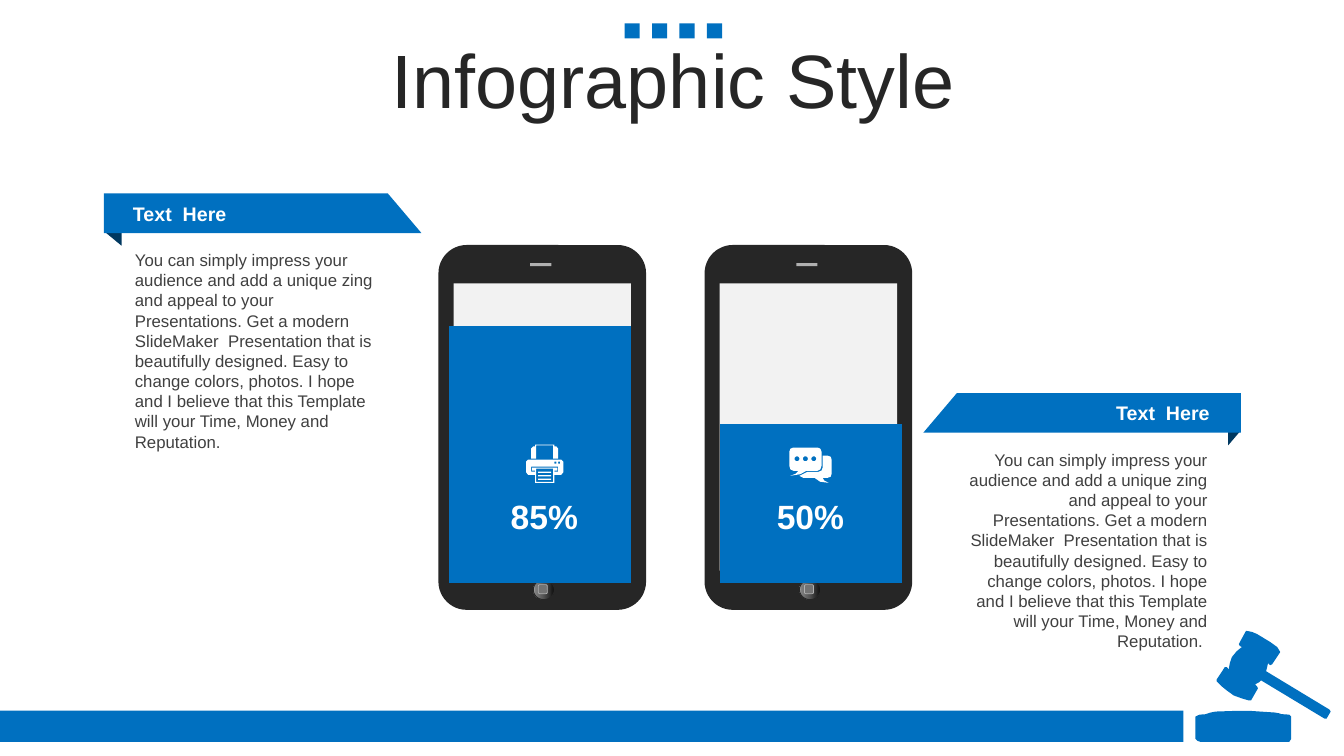
from copy import deepcopy
from dataclasses import dataclass
from math import cos, pi, sin

from lxml.etree import SubElement
from pptx import Presentation
from pptx.chart.data import CategoryChartData
from pptx.dml.color import RGBColor
from pptx.enum.chart import XL_CHART_TYPE
from pptx.enum.shapes import MSO_SHAPE
from pptx.enum.text import MSO_ANCHOR, PP_ALIGN
from pptx.oxml.ns import qn
from pptx.util import Pt


@dataclass(frozen=True)
class Theme:
    """Colours, font and type sizes of the slide."""
    blue: str = "0070C0"
    navy: str = "003860"
    dark: str = "262626"
    body: str = "404040"
    grey: str = "B0B0B0"
    key: str = "737373"
    pale: str = "F2F2F2"
    white: str = "FFFFFF"
    shine: tuple = ((0, "0F0F0F"), (.56, "595959"), (.91, "808080"), (1, "BFBFBF"))
    font: str = "Arial"
    title: int = 54
    share: int = 24
    chart: int = 18
    label: int = 14
    text: int = 12


T = Theme()
BODY = ("You can simply impress your audience and add a unique zing and appeal to your "
        "Presentations. Get a modern SlideMaker  Presentation that is beautifully designed. "
        "Easy to change colors, photos. I hope and I believe that this Template will your "
        "Time, Money and Reputation.")
BASE = [(0, 4.3), (0, 20.2), (1.4, 21.6), (3.6, 22.3), (67, 22.3), (68.4, 20.2),
        (68.4, 4.3), (67, 2.9), (61.2, 2.5), (60, 2), (56.9, 1.4), (38.9, .2),
        (28.8, .2), (14.4, .7), (10.8, 1.4), (7.2, 2.6), (2.9, 2.9), (1.4, 3.6)]
GAVEL = [(1.4, 37.4), (3.6, 39.6), (7.2, 42.5), (12.2, 46.1), (18, 48.2), (23, 49.7),
         (24.5, 49.7), (29.5, 41), (28.8, 39.6), (27.4, 38.2), (30.2, 36.7), (31.7, 35.3),
         (77, 62.6), (78.5, 62.6), (81.4, 57.6), (80.6, 56.2), (35.3, 28.8), (36, 25.9),
         (36.7, 23), (38.2, 24.5), (39.6, 23.8), (45.4, 15.1), (44.6, 13.7), (43.2, 11.5),
         (38.2, 7.9), (28.8, 2.2), (25.2, .7), (21.6, 0), (20.9, 0), (15.8, 9.4),
         (16.6, 10.8), (18, 11.5), (14.4, 14.4), (10.8, 18.7), (9.4, 23), (8.6, 27.4),
         (7.2, 25.9), (5.8, 25.9), (0, 34.6), (0, 36)]
SLOT = [(3.6, 15.8), (3.6, 19.4), (6.5, 19.4), (6.5, 18.7), (4.3, 18.7), (4.3, 16.6),
        (22.3, 16.6), (22.3, 18.7), (20.2, 18.7), (20.2, 19.4), (23, 19.4), (23, 15.8)]
CASE = [(1.4, 10.8), (25.2, 10.8), (26.6, 12.2), (26.6, 19.8), (25.2, 21.6), (20.2, 21.6),
        (20.2, 27.4), (6.5, 27.4), (6.5, 21.6), (1.4, 21.6), (0, 19.8), (0, 12.2)]
TRAY = [(6.5, 0), (20.2, 0), (20.2, 1.4), (21.6, 1.4), (23, 2.9), (23, 10.1), (19.4, 10.1),
        (19.4, .7), (7.2, .7), (7.2, 10.1), (3.6, 10.1), (3.6, 2.9), (5, 1.4), (6.5, 1.4)]
FRONT = [(2.9, 0), (20.2, 0), (22.2, .8), (23, 2.9), (23, 13), (22.2, 15.6), (20.2, 16.6),
         (12.2, 16.6), (7.9, 19), (.7, 20.2), (4.6, 18.7), (6.5, 16.6), (2.9, 16.6),
         (.8, 15.6), (0, 13), (0, 2.9), (.8, .8)]
BACK = [(23.8, 5.8), (27.4, 5.8), (29.6, 6.6), (30.2, 8.6), (30.2, 18.7), (29.6, 20.8),
        (27.4, 21.6), (23.8, 21.6), (25, 23.6), (28.1, 25.2), (22, 24.4), (18, 21.6),
        (10, 21.6), (7.2, 20.2), (13, 17.3), (20.9, 17.3), (23, 16.4), (23.8, 14.4)]


def rgb(code):
    """Turn a hex code into a colour."""
    return RGBColor.from_string(code)


def paint(shape, fill):
    """Give a shape a flat fill with no line or shadow."""
    shape.shadow.inherit = False
    shape.fill.solid()
    shape.fill.fore_color.rgb = rgb(fill)
    shape.line.fill.background()
    return shape


def block(slide, x, y, w, h, fill, kind=MSO_SHAPE.RECTANGLE):
    """Add a flat preset shape."""
    return paint(slide.shapes.add_shape(kind, Pt(x), Pt(y), Pt(w), Pt(h)), fill)


def outline(slide, x, y, loops, fill):
    """Draw closed loops, relative to x and y, as one shape."""
    loops = [[(Pt(x + a), Pt(y + b)) for a, b in loop] for loop in loops]
    pen = slide.shapes.build_freeform(*loops[0][0])
    pen.add_line_segments(loops[0][1:])
    for loop in loops[1:]:
        pen.move_to(*loop[0])
        pen.add_line_segments(loop[1:])
    return paint(pen.convert_to_shape(), fill)


def write(frame, text, size, color, align, bold=False, mid=True):
    """Put one styled run in a text frame."""
    frame.word_wrap = True
    frame.vertical_anchor = MSO_ANCHOR.MIDDLE if mid else MSO_ANCHOR.TOP
    para = frame.paragraphs[0]
    para.alignment = align
    run = para.add_run()
    run.text = text
    run.font.name, run.font.size, run.font.bold = T.font, Pt(size), bold
    run.font.color.rgb = rgb(color)
    return para


def box(slide, x, y, w, h, *args, **style):
    """Add a text box and return its frame."""
    frame = slide.shapes.add_textbox(Pt(x), Pt(y), Pt(w), Pt(h)).text_frame
    write(frame, *args, **style)
    return frame


def header(slide, x, y, w, h):
    """Place the title and the row of squares over it."""
    size, step = 10.8, 19.6
    left = x + (w - 3 * step - size) / 2
    for i in range(4):
        block(slide, left + i * step, y - 15, size, size, T.blue)
    title = slide.shapes.title
    title.left, title.top, title.width, title.height = Pt(x), Pt(y), Pt(w), Pt(h)
    para = write(title.text_frame, "Infographic Style", T.title, T.dark, PP_ALIGN.CENTER)
    para.line_spacing, para.space_before = .9, Pt(10)


def footer(slide, x, y, w, h):
    """Draw the bottom bar and the gavel at its end."""
    block(slide, x, y, w, h, T.blue)
    outline(slide, x + w + 8.6, y, [BASE], T.blue)
    outline(slide, x + w + 23.8, y - 56.9, [GAVEL], T.blue)


def phone(slide, x, y, w, h):
    """Draw a phone with speaker, button and screen."""
    case = block(slide, x, y, w, h, T.dark, MSO_SHAPE.ROUNDED_RECTANGLE)
    case.adjustments[0] = .136
    block(slide, x + 65.5, y + 13, 15.1, 2.2, T.grey)
    disc = block(slide, x + 67.7, y + 239, 15.1, 14.4, T.dark, MSO_SHAPE.OVAL)
    disc.fill.gradient()
    disc.fill.gradient_angle = 180
    stops = disc.fill._fill._gradFill.find(qn("a:gsLst"))
    for _ in T.shine[2:]:
        stops.append(deepcopy(stops[0]))
    for stop, (place, color) in zip(disc.fill.gradient_stops, T.shine):
        stop.position, stop.color.rgb = place, rgb(color)
    disc.line.color.rgb, disc.line.width = rgb(T.dark), Pt(0)
    key = block(slide, x + 71.3, y + 242.6, 6.5, 6.5, T.key, MSO_SHAPE.ROUNDED_RECTANGLE)
    key.line.color.rgb, key.line.width = rgb(T.grey), Pt(.5)
    block(slide, x + 10.8, y + 27.4, w - 21.6, 205.2, T.pale)


def banner(slide, x, y, w, h, text, fold, label, body, flip=False):
    """Draw a folded ribbon with its label and the text below it."""
    align = PP_ALIGN.RIGHT if flip else PP_ALIGN.LEFT

    def side(points):
        return [(w - a if flip else a, b) for a, b in points]

    def left(inset, wide):
        return x + (w - inset - wide if flip else inset)

    outline(slide, x, y, [side([(0.5, h - 1), (fold, h - 1), (fold, h + 9)])], T.navy)
    outline(slide, x, y, [side([(0, 0), (w - 24, 0), (w, h), (0, h)])], T.blue)
    frame = box(slide, left(label, 113), y, 113, h, "Text  Here", T.label, T.white,
                align, bold=True)
    frame.margin_left = Pt(8.6)
    frame.paragraphs[0].space_before = Pt(2.8)
    box(slide, left(body, 189), y + 36.7, 189, 152.6, text, T.text, T.body, align, mid=False)


def levels(slide, x, y, w, h):
    """Chart the fill levels of both screens."""
    data = CategoryChartData()
    data.categories = ["1", "2"]
    data.add_series("Series 1", (100, 62))
    chart = slide.shapes.add_chart(XL_CHART_TYPE.COLUMN_STACKED, Pt(x), Pt(y), Pt(w), Pt(h),
                                   data).chart
    chart.has_legend = chart.has_title = False
    chart.font.name, chart.font.size = T.font, Pt(T.chart)
    chart.font.color.rgb = rgb("000000")
    chart.value_axis.minimum_scale, chart.value_axis.maximum_scale = 0, 100
    chart.value_axis.has_major_gridlines = False
    chart.value_axis.visible = chart.category_axis.visible = False
    plot = chart.plots[0]
    plot.gap_width, plot.overlap, plot.vary_by_categories = 49, 100, False
    fill = plot.series[0].format.fill
    fill.solid()
    fill.fore_color.rgb = rgb(T.blue)
    area = chart._chartSpace.chart.plotArea
    for old in area.findall(qn("c:layout")):
        area.remove(old)
    layout = SubElement(area, qn("c:layout"))
    area.insert(0, layout)
    manual = SubElement(layout, qn("c:manualLayout"))
    for tag, val in (("layoutTarget", "inner"), ("xMode", "edge"), ("yMode", "edge"),
                     ("x", ".02"), ("y", ".126"), ("w", ".96"), ("h", ".856")):
        SubElement(manual, qn("c:" + tag)).set("val", val)


def rect(x, y, w, h):
    """List the corners of a rectangle."""
    return [(x, y), (x + w, y), (x + w, y + h), (x, y + h)]


def printer(slide, x, y):
    """Draw the printer icon."""
    lines = [rect(8.6, top, 9.4, .8) for top in (19.4, 21.9, 24.4)]
    lights = [rect(a, 12.2, 1.4, 1.4) for a in (20.2, 23)]
    outline(slide, x, y, [CASE, TRAY, SLOT, rect(7.2, 17.3, 12.2, 9.4)] + lines + lights,
            T.white)


def chat(slide, x, y):
    """Draw the icon of two speech bubbles."""
    dots = [[(a + 1.8 * cos(i * pi / 6), 8 + 1.8 * sin(i * pi / 6)) for i in range(12)]
            for a in (5.5, 11.5, 17.5)]
    outline(slide, x, y, [FRONT, BACK] + dots, T.white)


def main():
    """Build and save the slide."""
    deck = Presentation()
    deck.slide_width, deck.slide_height = Pt(960), Pt(540)
    slide = deck.slides.add_slide(deck.slide_layouts[5])
    header(slide, 25.2, 31.7, 911.5, 56.9)
    footer(slide, 0, 507.6, 845.3, 22.3)
    phones = (313.2, 503.3)
    for x in phones:
        phone(slide, x, 175, 148.3, 260.6)
    banner(slide, 74.2, 138.2, 226.8, 28.3, BODY, 12.6, 12.2, 15.1)
    banner(slide, 659.5, 280.8, 226.8, 28.3, BODY + " ", 9, 15.1, 16.6, flip=True)
    levels(slide, 280.8, 205.9, 403.2, 214.6)
    for x, share in zip(phones, ("85%", "50%")):
        box(slide, x + 43.9, 350.6, 63.4, 36, share, T.share, T.white, PP_ALIGN.CENTER,
            bold=True)
    printer(slide, 375.8, 317.5)
    chat(slide, 563.8, 319.7)
    deck.save("out.pptx")


if __name__ == "__main__":
    main()
